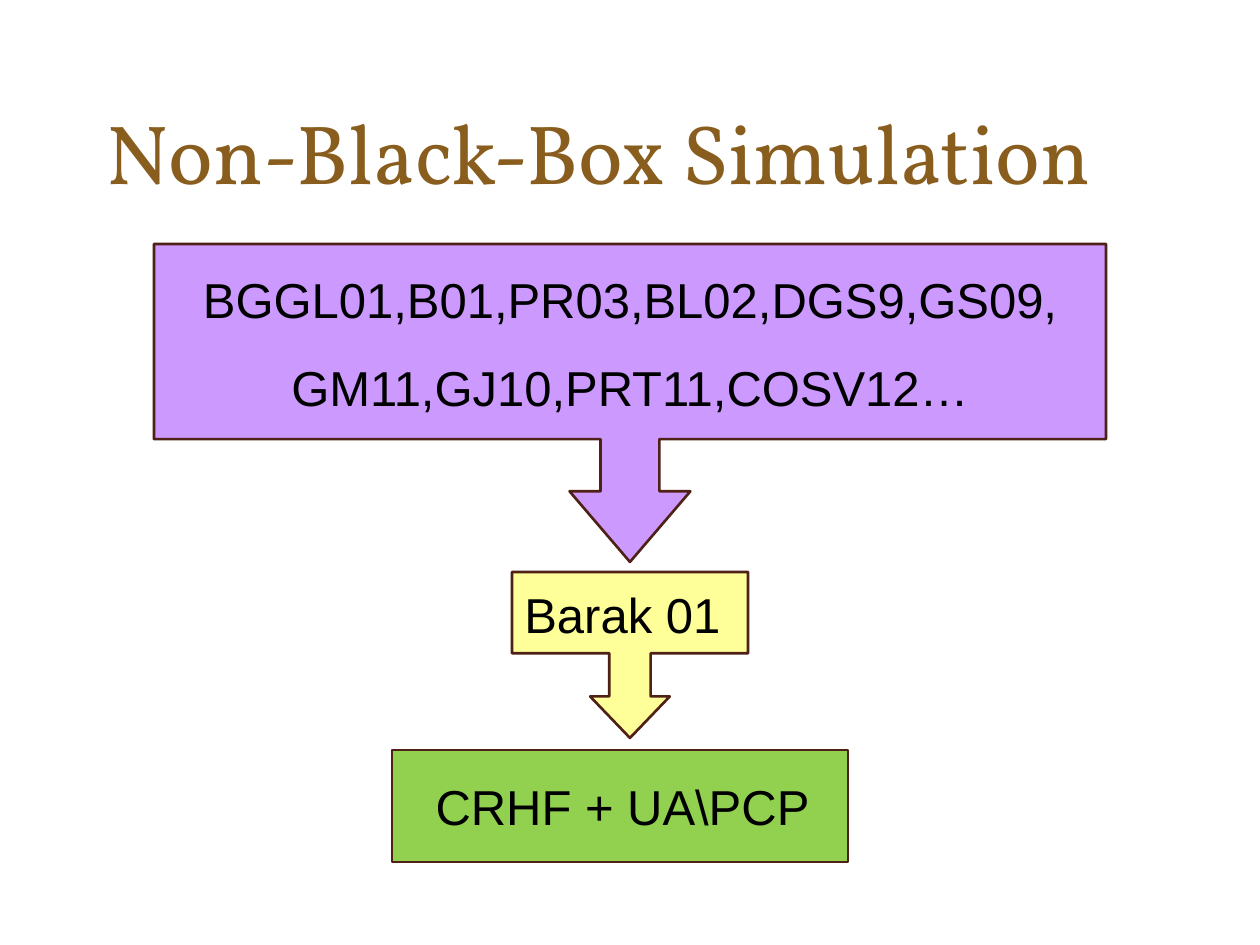
"""Build the Non-Black-Box Simulation slide."""
from dataclasses import dataclass

from pptx import Presentation
from pptx.dml.color import RGBColor
from pptx.enum.shapes import MSO_SHAPE
from pptx.enum.text import MSO_ANCHOR, MSO_AUTO_SIZE, PP_ALIGN
from pptx.util import Pt


@dataclass(frozen=True)
class Theme:
    title: str = "895D1D"
    text: str = "000000"
    line: str = "4F2015"
    yellow: str = "FFFF99"
    purple: str = "CC99FF"
    green: str = "92D050"
    title_font: str = "Vollkorn"
    body_font: str = "Arial"
    title_size: int = 48
    body_size: int = 28
    line_width: float = 1.5


THEME = Theme()
EMU_PER_PX = 914400 / 126
SLIDE = (1260, 945)

TITLE = ("Non-Black-Box Simulation", (94, 78, 1068, 145))
CALLOUT, BOX = MSO_SHAPE.DOWN_ARROW_CALLOUT, MSO_SHAPE.RECTANGLE
SHAPES = [
    (CALLOUT, (512, 572, 236, 166), THEME.yellow, (0.25, 0.24, 0.25, 0.49)),
    (CALLOUT, (154, 244, 952, 318), THEME.purple, (0.185, 0.19, 0.222, 0.614)),
    (BOX, (392, 750, 456, 112), THEME.green, ()),
]
LABELS = [
    (["BGGL01,B01,PR03,BL02,DGS9,GS09,", "GM11,GJ10,PRT11,COSV12…"],
     (0, 234, 1260, 190), dict(align=PP_ALIGN.CENTER, spacing=1.5)),
    (["Barak 01"], (512, 578, 236, 72), {}),
    (["CRHF + UA\\PCP"], (416, 770, 413, 72), dict(align=PP_ALIGN.CENTER)),
]


def emu(box):
    return [round(v * EMU_PER_PX) for v in box]


def write(tf, lines, font=THEME.body_font, size=THEME.body_size,
          color=THEME.text, align=PP_ALIGN.LEFT, spacing=1.0,
          anchor=MSO_ANCHOR.TOP):
    tf.word_wrap = True
    tf.auto_size = MSO_AUTO_SIZE.NONE
    tf.vertical_anchor = anchor
    for i, line in enumerate(lines):
        p = tf.add_paragraph() if i else tf.paragraphs[0]
        p.alignment, p.line_spacing = align, spacing
        r = p.add_run()
        r.text = line
        r.font.name, r.font.size = font, Pt(size)
        r.font.color.rgb = RGBColor.from_string(color)


def add_block(s, kind, box, fill, adjustments):
    sp = s.shapes.add_shape(kind, *emu(box))
    sp.shadow.inherit = False
    sp.fill.solid()
    sp.fill.fore_color.rgb = RGBColor.from_string(fill)
    sp.line.color.rgb = RGBColor.from_string(THEME.line)
    sp.line.width = Pt(THEME.line_width)
    for i, value in enumerate(adjustments):
        sp.adjustments[i] = value


def main():
    prs = Presentation()
    prs.slide_width, prs.slide_height = emu(SLIDE)
    s = prs.slides.add_slide(prs.slide_layouts[5])

    text, box = TITLE
    title = s.shapes.title
    title.left, title.top, title.width, title.height = emu(box)
    write(title.text_frame, [text], font=THEME.title_font,
          size=THEME.title_size, color=THEME.title, anchor=MSO_ANCHOR.MIDDLE)

    for block in SHAPES:
        add_block(s, *block)
    for lines, box, style in LABELS:
        write(s.shapes.add_textbox(*emu(box)).text_frame, lines, **style)

    prs.save("out.pptx")


if __name__ == "__main__":
    main()
